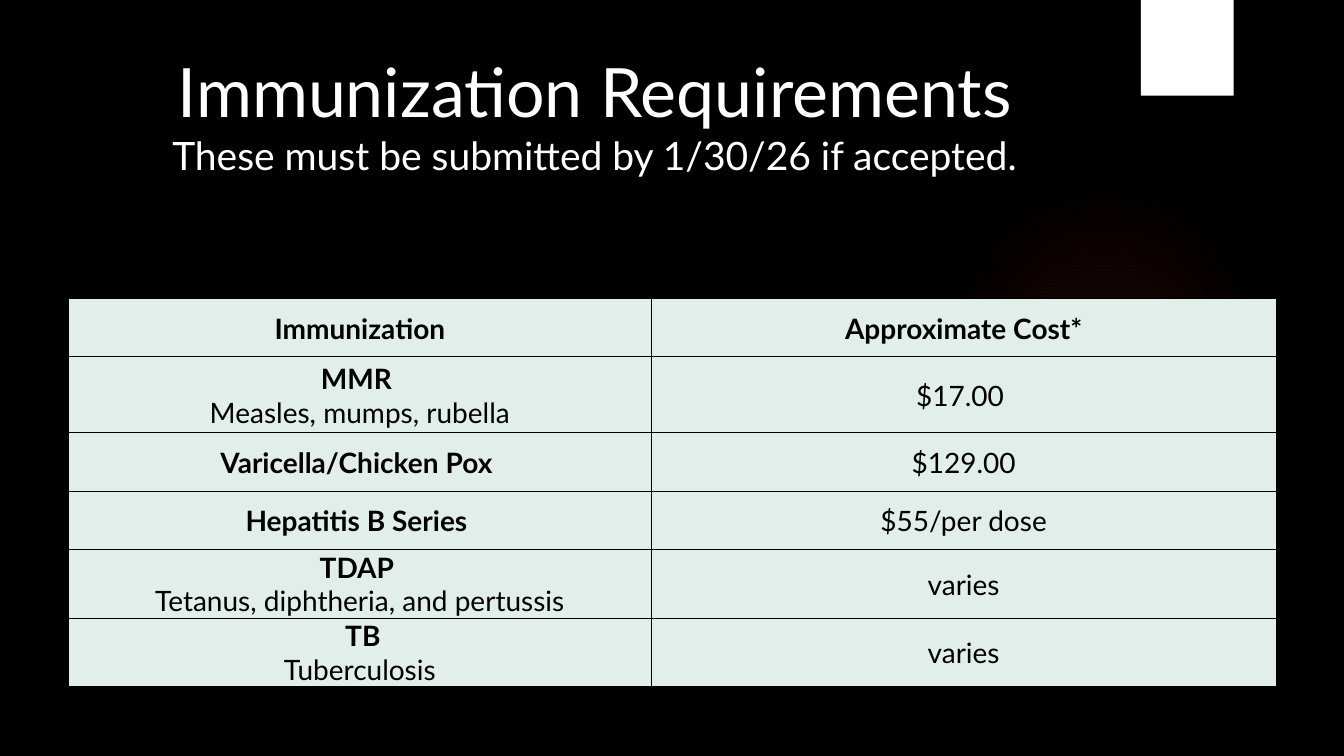
from pptx import Presentation
from pptx.dml.color import RGBColor
from pptx.enum.shapes import MSO_SHAPE as Preset
from pptx.enum.text import MSO_ANCHOR as Anchor, MSO_AUTO_SIZE as AutoSize, PP_ALIGN as Align
from pptx.oxml import parse_xml
from pptx.oxml.ns import nsdecls, qn
from pptx.util import Cm, Pt

FONT = "Lato"
BLACK, WHITE, MINT, RED = "000000", "FFFFFF", "E1EEE9", "E92724"
GLOW_STOPS = [(0, 7), (36, 6), (69, 0), (100, 0)]
COLUMN_WIDTHS = [14.68, 15.75]
ROW_HEIGHTS = [1.47, 1.91, 1.47, 1.47, 1.7, 1.7]
REQUIREMENTS = [
    ("MMR ", "Measles, mumps, rubella", "$17.00 "),
    ("Varicella/Chicken Pox ", "", "$129.00"),
    ("Hepatitis B Series ", "", "$55/per dose"),
    ("TDAP ", "Tetanus, diphtheria, and pertussis", "varies"),
    (" TB", "Tuberculosis", "varies"),
]


def color(value):
    return RGBColor.from_string(value)


def paint(fill, value):
    fill.solid()
    fill.fore_color.rgb = color(value)


def write_lines(frame, lines, ink):
    paragraph = frame.paragraphs[0]
    paragraph.alignment = Align.CENTER
    for number, (words, size, bold) in enumerate(lines):
        if number:
            paragraph.add_line_break()
        run = paragraph.add_run()
        run.text = words
        run.font.name = FONT
        run.font.size = Pt(size)
        run.font.bold = bold
        run.font.color.rgb = color(ink)


def add_plain_shape(slide, preset, left, top, width, height):
    shape = slide.shapes.add_shape(preset, Cm(left), Cm(top), Cm(width), Cm(height))
    shape.shadow.inherit = False
    shape.line.fill.background()
    return shape


def add_glow(slide):
    glow = add_plain_shape(slide, Preset.OVAL, 23.9, 4.65, 7.82, 7.82)
    glow.fill.background()
    stops = "".join(
        f'<a:gs pos="{position * 1000}"><a:srgbClr val="{RED}">'
        f'<a:alpha val="{opacity * 1000}"/></a:srgbClr></a:gs>'
        for position, opacity in GLOW_STOPS
    )
    gradient = parse_xml(
        f'<a:gradFill {nsdecls("a")}><a:gsLst>{stops}</a:gsLst><a:path path="circle">'
        '<a:fillToRect l="50000" t="50000" r="50000" b="50000"/></a:path></a:gradFill>'
    )
    properties = glow._element.spPr
    properties.replace(properties.find(qn("a:noFill")), gradient)


def add_tab(slide):
    tab = add_plain_shape(slide, Preset.RECTANGLE, 28.75, 0, 2.34, 2.41)
    paint(tab.fill, WHITE)


def fill_title(slide):
    title = slide.shapes.title
    title.left, title.top, title.width, title.height = Cm(0.38), Cm(1.12), Cm(29.21), Cm(3)
    frame = title.text_frame
    frame.word_wrap = True
    frame.auto_size = AutoSize.NONE
    frame.vertical_anchor = Anchor.TOP
    write_lines(frame, [
        ("Immunization Requirements", 48.6, False),
        ("These must be submitted by 1/30/26 if accepted.", 27.9, False),
    ], WHITE)


def fill_cell(cell, lines):
    cell.vertical_anchor = Anchor.MIDDLE
    cell.margin_left = cell.margin_right = cell.margin_top = Cm(0.03)
    cell.margin_bottom = 0
    properties = cell._tc.get_or_add_tcPr()
    for side in ("lnL", "lnR", "lnT", "lnB"):
        properties.append(parse_xml(
            f'<a:{side} {nsdecls("a")} w="{Pt(0.5)}"><a:solidFill>'
            f'<a:srgbClr val="{BLACK}"/></a:solidFill></a:{side}>'
        ))
    paint(cell.fill, MINT)
    write_lines(cell.text_frame, lines, BLACK)


def add_cost_table(slide):
    table = slide.shapes.add_table(
        len(ROW_HEIGHTS), len(COLUMN_WIDTHS), Cm(1.73), Cm(7.52),
        Cm(sum(COLUMN_WIDTHS)), Cm(sum(ROW_HEIGHTS)),
    ).table
    table.first_row = table.horz_banding = False
    for column, width in zip(table.columns, COLUMN_WIDTHS):
        column.width = Cm(width)
    for row, height in zip(table.rows, ROW_HEIGHTS):
        row.height = Cm(height)
    for column, heading in enumerate(["Immunization", "Approximate Cost*"]):
        fill_cell(table.cell(0, column), [(heading, 20, True)])
    for row, (vaccine, diseases, cost) in enumerate(REQUIREMENTS, 1):
        lines = [(vaccine, 20, True)]
        if diseases:
            lines.append((diseases, 20, False))
        fill_cell(table.cell(row, 0), lines)
        fill_cell(table.cell(row, 1), [(cost, 20, False)])


def main():
    deck = Presentation()
    deck.slide_width, deck.slide_height = Cm(33.87), Cm(19.05)
    slide = deck.slides.add_slide(deck.slide_layouts[5])
    paint(slide.background.fill, BLACK)
    add_glow(slide)
    add_tab(slide)
    add_cost_table(slide)
    fill_title(slide)
    deck.save("out.pptx")


if __name__ == "__main__":
    main()
